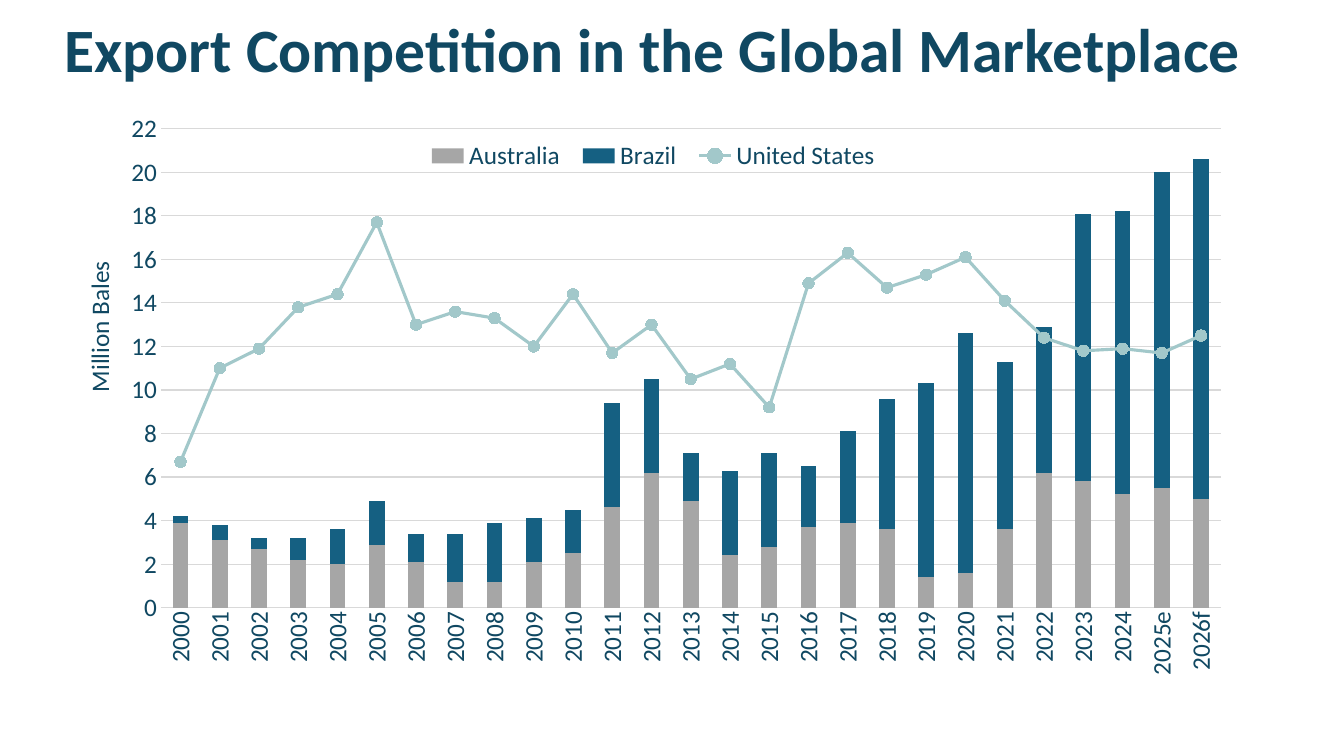
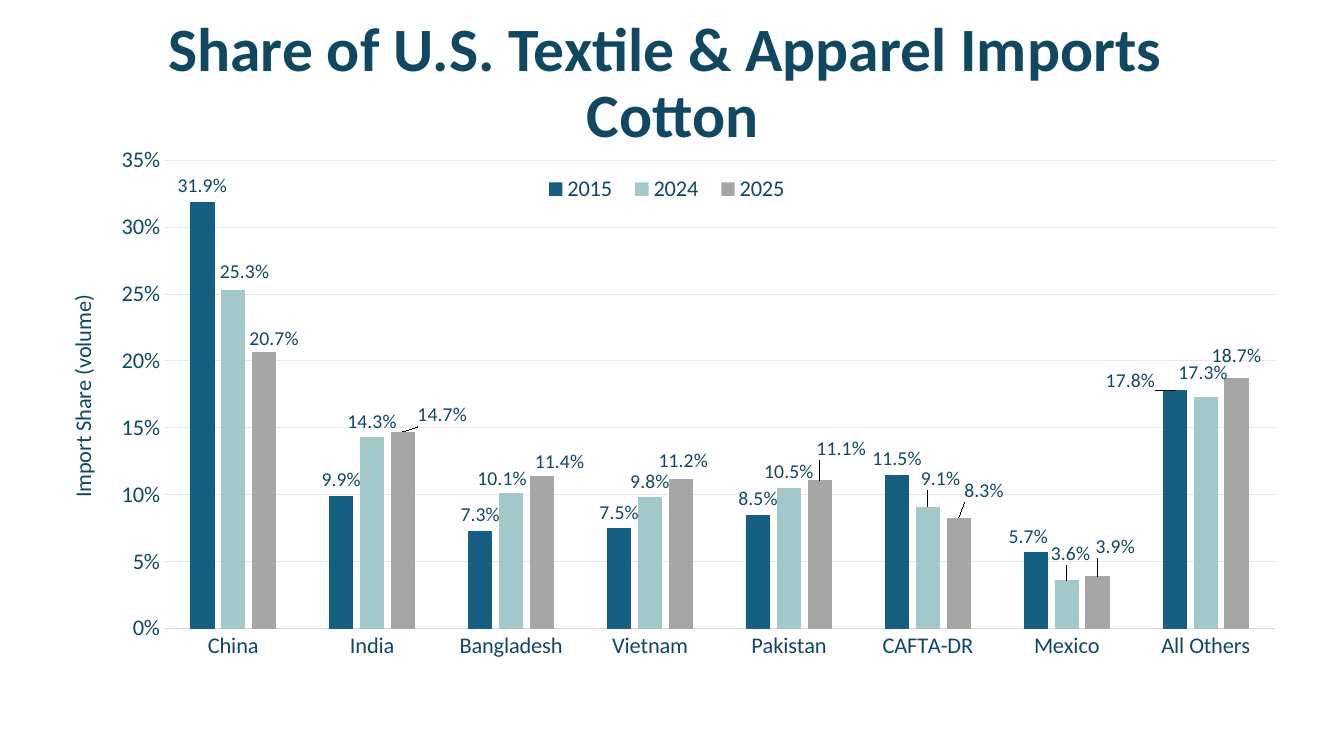
from dataclasses import dataclass

from pptx import Presentation, util as u
from pptx.chart.data import CategoryChartData
from pptx.dml.color import RGBColor
from pptx.enum import chart as ch, text
from pptx.oxml import parse_xml
from pptx.oxml.ns import nsdecls, qn


@dataclass(frozen=True)
class Theme:
    width: int = u.Inches(13.33)
    height: int = u.Inches(7.5)
    font: str = "Calibri"
    ink: str = "104862"
    blue: str = "156082"
    aqua: str = "A2C8CA"
    grey: str = "A6A6A6"
    axis: str = "D9D9D9"
    pale_grid: str = "E7E7EA"
    title_size: int = 44
    label_size: int = 14
    hairline: float = 0.75
    trend_line: float = 2.25


THEME = Theme()


def rgb(code):
    return RGBColor.from_string(code)


def frame(left, top, width, height):
    """Turn percentages of the slide into left, top, width and height."""
    return [
        round(share * side / 100)
        for share, side in zip((left, top, width, height), (THEME.width, THEME.height) * 2)
    ]


def style_font(font, size, bold=False):
    font.name = THEME.font
    font.size = u.Pt(size)
    font.bold = bold
    font.color.rgb = rgb(THEME.ink)


def style_line(line, color, width=THEME.hairline):
    line.color.rgb = rgb(color)
    line.width = u.Pt(width)


def fill(target, color):
    target.format.fill.solid()
    target.format.fill.fore_color.rgb = rgb(color)


def add_title_page(deck, lines, area, lift=0.05):
    """Add a page with a title; lift is the bottom inset in inches."""
    page = deck.slides.add_slide(deck.slide_layouts[5])
    title = page.shapes.title
    title.left, title.top, title.width, title.height = frame(*area)
    box = title.text_frame
    box.word_wrap = True
    box.auto_size = text.MSO_AUTO_SIZE.NONE
    box.vertical_anchor = text.MSO_ANCHOR.MIDDLE
    box.margin_bottom = u.Inches(lift)
    para = box.paragraphs[0]
    para.alignment = text.PP_ALIGN.CENTER
    para.line_spacing = 0.9
    for index, line in enumerate(lines):
        if index:
            para.add_line_break()
        span = para.add_run()
        span.text = line
        style_font(span.font, THEME.title_size, bold=True)
    return page


def set_layout(parent, after, left, top, width=None, height=None, inner=False, edge=True):
    """Fix a chart part's place, in percent of the chart, after a given child."""
    for old in parent.findall(qn("c:layout")):
        parent.remove(old)
    values = [("layoutTarget", "inner")] if inner else []
    if edge:
        values += [("xMode", "edge"), ("yMode", "edge")]
    sizes = (("x", left), ("y", top), ("w", width), ("h", height))
    values += [(tag, round(size / 100, 4)) for tag, size in sizes if size is not None]
    tags = "".join(f'<c:{tag} val="{value}"/>' for tag, value in values)
    layout = parse_xml(
        f'<c:layout {nsdecls("c")}><c:manualLayout>{tags}</c:manualLayout></c:layout>'
    )
    anchor = parent.find(qn(after)) if after else None
    if anchor is None:
        parent.insert(0, layout)
    else:
        anchor.addnext(layout)


def add_chart(page, kind, area, names, series, plot_area, size):
    data = CategoryChartData()
    data.categories = names
    for name, values in series.items():
        data.add_series(name, values)
    chart = page.shapes.add_chart(kind, *frame(*area), data).chart
    style_font(chart.font, size)
    chart.has_title = False
    chart.plots[0].vary_by_categories = False
    set_layout(chart.element.xpath("c:chart/c:plotArea")[0], None, *plot_area, inner=True)
    return chart


def style_axes(chart, caption, caption_at, size, top, step, number_format, grid):
    for axis in (chart.category_axis, chart.value_axis):
        axis.major_tick_mark = axis.minor_tick_mark = ch.XL_TICK_MARK.NONE
        style_font(axis.tick_labels.font, size)
    style_line(chart.category_axis.format.line, THEME.axis)
    axis = chart.value_axis
    axis.format.line.fill.background()
    axis.minimum_scale, axis.maximum_scale, axis.major_unit = 0, top, step
    axis.has_major_gridlines = True
    style_line(axis.major_gridlines.format.line, grid)
    axis.tick_labels.number_format = number_format
    axis.tick_labels.number_format_is_linked = False
    box = axis.axis_title.text_frame
    span = box.paragraphs[0].add_run()
    span.text = caption
    style_font(span.font, size)
    set_layout(chart.element.xpath(".//c:valAx/c:title")[0], "c:tx", *caption_at)


def add_legend(chart, area, size):
    chart.has_legend = True
    chart.legend.position = ch.XL_LEGEND_POSITION.BOTTOM
    chart.legend.include_in_layout = False
    style_font(chart.legend.font, size)
    set_layout(chart.element.xpath("c:chart/c:legend")[0], "c:legendPos", *area)


def turn_last_series_into_line(chart, color):
    bars = chart.element.xpath(".//c:barChart")[0]
    moved = bars.findall(qn("c:ser"))[-1]
    for flag in moved.findall(qn("c:invertIfNegative")):
        moved.remove(flag)
    axes = "".join(f'<c:axId val="{axis.get("val")}"/>' for axis in bars.findall(qn("c:axId")))
    lines = parse_xml(
        f'<c:lineChart {nsdecls("c")}><c:grouping val="standard"/><c:varyColors val="0"/>'
        f'<c:marker val="1"/>{axes}</c:lineChart>'
    )
    lines.insert(2, moved)
    bars.addnext(lines)
    trend = chart.plots[1].series[0]
    trend.smooth = False
    style_line(trend.format.line, color, THEME.trend_line)
    trend.marker.style = ch.XL_MARKER_STYLE.CIRCLE
    trend.marker.size = 8
    fill(trend.marker, color)
    style_line(trend.marker.format.line, color)


def label_series(series, shifts, number_format="0.0%"):
    """Label each bar, moving some labels by percentages of the chart."""
    labels = series.data_labels
    labels.show_value = True
    labels.position = ch.XL_LABEL_POSITION.OUTSIDE_END
    labels.number_format = number_format
    labels.number_format_is_linked = False
    style_font(labels.font, THEME.label_size)
    for index, shift in shifts.items():
        label = series.points[index].data_label
        style_font(label.font, THEME.label_size)
        label.position = ch.XL_LABEL_POSITION.OUTSIDE_END
        element = labels._element.xpath(f'c:dLbl[c:idx/@val="{index}"]')[0]
        element.find(qn("c:idx")).addnext(parse_xml(
            f'<c:numFmt {nsdecls("c")} formatCode="{number_format}" sourceLinked="0"/>'
        ))
        set_layout(element, "c:idx", *shift, edge=False)


def build_export_page(deck):
    size = 18
    page = add_title_page(
        deck, ["Export Competition in the Global Marketplace"], (3.6, 1.33, 90.02, 11.2)
    )
    years = [str(year) for year in range(2000, 2025)] + ["2025e", "2026f"]
    bales = {
        "Australia": [3.9, 3.1, 2.7, 2.2, 2, 2.9, 2.1, 1.2, 1.2, 2.1, 2.5, 4.6, 6.2, 4.9,
                      2.4, 2.8, 3.7, 3.9, 3.6, 1.4, 1.6, 3.6, 6.2, 5.8, 5.2, 5.5, 5],
        "Brazil": [0.3, 0.7, 0.5, 1, 1.6, 2, 1.3, 2.2, 2.7, 2, 2, 4.8, 4.3, 2.2,
                   3.9, 4.3, 2.8, 4.2, 6, 8.9, 11, 7.7, 6.7, 12.3, 13, 14.5, 15.6],
        "United States": [6.7, 11, 11.9, 13.8, 14.4, 17.7, 13, 13.6, 13.3, 12, 14.4, 11.7, 13,
                          10.5, 11.2, 9.2, 14.9, 16.3, 14.7, 15.3, 16.1, 14.1, 12.4, 11.8,
                          11.9, 11.7, 12.5],
    }
    chart = add_chart(
        page, ch.XL_CHART_TYPE.COLUMN_STACKED, (3.6, 14.4, 90.02, 77.73),
        years, bales, (9.3, 3.4, 87.6, 81.5), size,
    )
    style_axes(chart, "Million Bales", (2.4, 25.2), size, 22, 2, "#,##0", THEME.axis)
    chart.element.xpath(".//c:catAx/c:txPr/a:bodyPr")[0].set("rot", "-5400000")
    add_legend(chart, (30.5, 4.5, 39, 7), size)
    turn_last_series_into_line(chart, THEME.aqua)
    bars = chart.plots[0]
    bars.gap_width, bars.overlap = 150, 100
    for series, color in zip(bars.series, (THEME.grey, THEME.blue)):
        fill(series, color)


def build_import_page(deck):
    size = 16
    page = add_title_page(
        deck, ["Share of U.S. Textile & Apparel Imports ", "Cotton"],
        (5.03, 7.73, 90.02, 16.67), lift=0.78,
    )
    origins = ["China", "India", "Bangladesh", "Vietnam", "Pakistan", "CAFTA-DR", "Mexico",
               "All Others"]
    shares = {
        "2015": [0.319, 0.099, 0.073, 0.075, 0.085, 0.115, 0.057, 0.178],
        "2024": [0.253, 0.143, 0.101, 0.098, 0.105, 0.091, 0.036, 0.173],
        "2025": [0.207, 0.147, 0.114, 0.112, 0.111, 0.083, 0.039, 0.187],
    }
    label_shifts = [
        {6: (-0.6, 0), 7: (-3.5, 1.1)},
        {0: (0.9, -0.4), 2: (-0.7, 0.2), 5: (1, -2.2), 6: (0.3, -2), 7: (-0.2, -1.5)},
        {0: (0.8, 0.6), 1: (3.1, -0.2), 2: (1.4, 0.4), 3: (0.2, -0.4),
         4: (1.7, -2.8), 5: (2, -2), 6: (1.4, -2.6), 7: (0, -1.3)},
    ]
    chart = add_chart(
        page, ch.XL_CHART_TYPE.COLUMN_CLUSTERED, (1.88, 19.33, 94.52, 72.13),
        origins, shares, (10.9, 2.6, 87.5, 85.9), size,
    )
    style_axes(chart, "Import Share (volume)", (3, 26.6), size, 0.35, 0.05, "0%",
               THEME.pale_grid)
    add_legend(chart, (40, 4.4, 21, 7), size)
    bars = chart.plots[0]
    bars.gap_width, bars.overlap = 219, -27
    colors = (THEME.blue, THEME.aqua, THEME.grey)
    for series, color, shifts in zip(bars.series, colors, label_shifts):
        fill(series, color)
        label_series(series, shifts)


def main():
    deck = Presentation()
    deck.slide_width, deck.slide_height = THEME.width, THEME.height
    build_export_page(deck)
    build_import_page(deck)
    deck.save("out.pptx")


if __name__ == "__main__":
    main()
